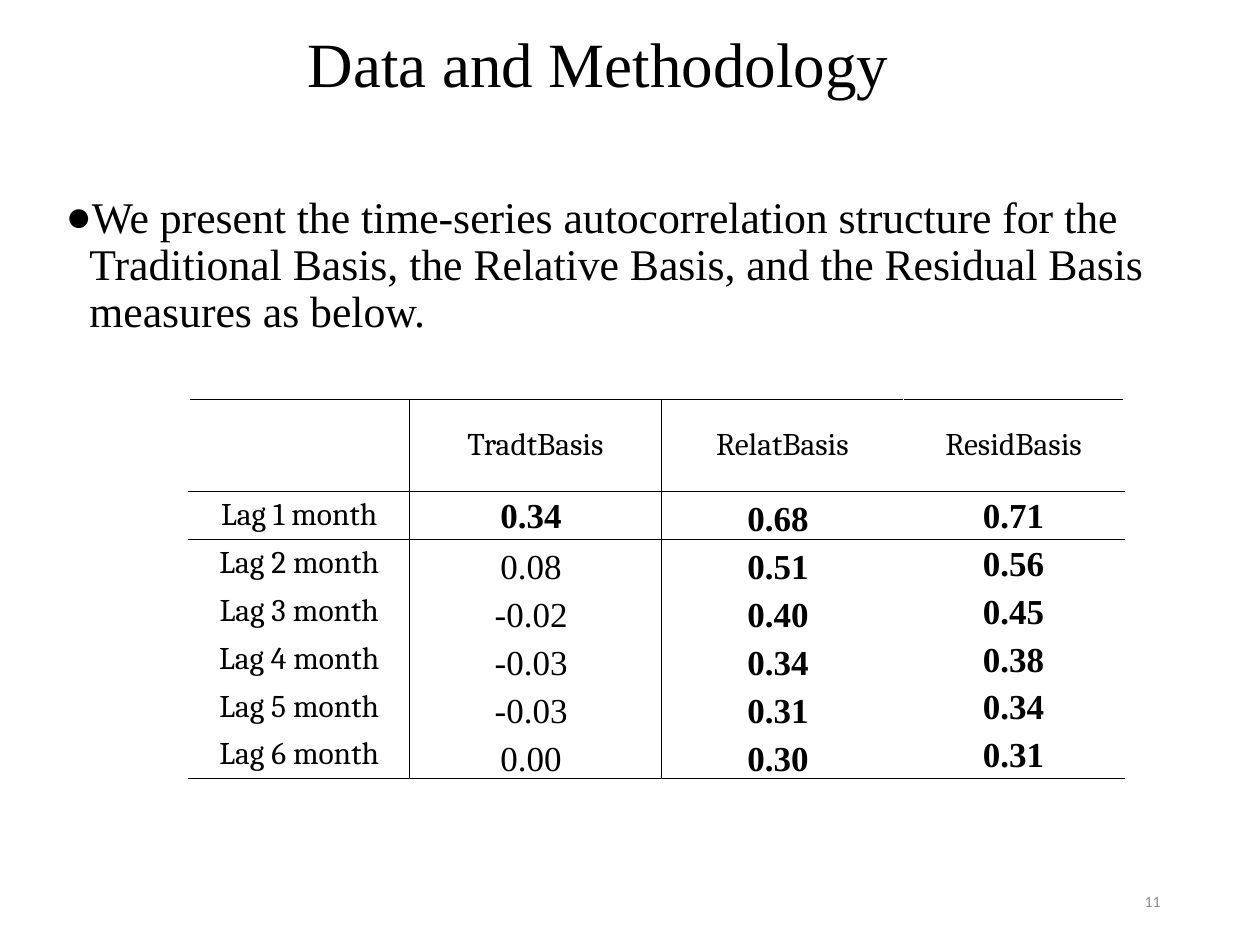
import pptx
import pptx.util
import pptx.dml.color
import pptx.enum.text
import pptx.oxml
import pptx.oxml.ns
from lxml import etree

Inches, Pt = pptx.util.Inches, pptx.util.Pt
RGBColor = pptx.dml.color.RGBColor
ALIGN, ANCHOR = pptx.enum.text.PP_ALIGN, pptx.enum.text.MSO_ANCHOR
qn = pptx.oxml.ns.qn

BLACK = RGBColor(0, 0, 0)
WHITE = RGBColor(0xFF, 0xFF, 0xFF)
GREY = RGBColor(0x8C, 0x8C, 0x8C)
SERIF, LABEL_FONT, NUMBER_FONT = "Times New Roman", "Cambria", "Calibri"
NO_STYLE = "{2D5ABB26-0587-4C30-8999-92F81FD0307C}"

COLUMNS = [1.75, 2, 1.92, 1.75]
HEADER_HEIGHT, ROW_HEIGHT = 0.73, 0.38
HEADINGS = ["", "TradtBasis", "RelatBasis", "ResidBasis"]
AUTOCORRELATIONS = [
    ("0.34 ", "0.68 ", "0.71"),
    ("0.08 ", "0.51 ", "0.56"),
    ("-0.02 ", "0.40 ", "0.45"),
    ("-0.03 ", "0.34 ", "0.38"),
    ("-0.03 ", "0.31 ", "0.34"),
    ("0.00 ", "0.30 ", "0.31"),
]
SIGNIFICANT = 0.3


def write(tf, text, size, font=SERIF, color=BLACK, bold=False,
          align=ALIGN.LEFT, spacing=None, before=None):
    """Write one formatted paragraph into a text frame and return it."""
    p = tf.paragraphs[0]
    p.alignment, p.line_spacing = align, spacing
    if before is not None:
        p.space_before = Pt(before)
    r = p.add_run()
    r.text = text
    r.font.size, r.font.name, r.font.bold = Pt(size), font, bold
    r.font.color.rgb = color
    return p


def place(sp, box, anchor):
    """Move a text shape to a box and return its wrapping text frame."""
    sp.left, sp.top, sp.width, sp.height = map(Inches, box)
    tf = sp.text_frame
    tf.word_wrap = True
    tf.auto_size = pptx.enum.text.MSO_AUTO_SIZE.NONE
    tf.vertical_anchor = anchor
    return tf


def add_title(s, box):
    """Fill the title placeholder."""
    tf = place(s.shapes.title, box, ANCHOR.MIDDLE)
    write(tf, "Data and Methodology ", 36, align=ALIGN.CENTER, spacing=0.9)


def add_body(s, box):
    """Fill the body placeholder with its bulleted statement."""
    tf = place(s.placeholders[1], box, ANCHOR.TOP)
    p = write(tf, "We present the time-series autocorrelation structure for the "
              "Traditional Basis, the Relative Basis, and the Residual Basis "
              "measures as below.", 25, spacing=0.9, before=7.5)
    pPr = p._p.get_or_add_pPr()
    pPr.set("marL", str(Inches(0.19)))
    pPr.set("indent", str(-Inches(0.19)))
    etree.SubElement(pPr, qn("a:buChar")).set("char", "●")


def add_page_number(s, box):
    """Write the page number at the right of a box."""
    tf = place(s.shapes.add_textbox(0, 0, 0, 0), box, ANCHOR.MIDDLE)
    write(tf, "11", 9, font=NUMBER_FONT, color=GREY, align=ALIGN.RIGHT)


def set_borders(cell, **colors):
    """Draw one-point borders on the sides L, R, T and B that have a colour."""
    tcPr = cell._tc.get_or_add_tcPr()
    for side in "LRTB":
        if colors.get(side) is not None:
            ln = etree.SubElement(tcPr, qn(f"a:ln{side}"), w=str(Pt(1)))
            fill = etree.SubElement(ln, qn("a:solidFill"))
            etree.SubElement(fill, qn("a:srgbClr")).set("val", str(colors[side]))


def fill_cell(cell, text, row, col):
    """Write a label or a value with the format of its row and column."""
    cell.margin_left = cell.margin_right = Inches(0.07)
    cell.margin_top = cell.margin_bottom = 0
    if row == 0 or col == 0:
        cell.vertical_anchor = ANCHOR.MIDDLE
        if text:
            write(cell.text_frame, text, 18, font=LABEL_FONT, align=ALIGN.CENTER)
        return
    top_aligned = col == 3 or (row, col) == (1, 1)
    cell.vertical_anchor = ANCHOR.TOP if top_aligned else ANCHOR.BOTTOM
    write(cell.text_frame, text, 20, bold=float(text) >= SIGNIFICANT,
          align=ALIGN.CENTER, spacing=1.15)


def add_lag_table(s, box):
    """Build the autocorrelation table with rules round header and foot."""
    rows = [HEADINGS] + [(f"Lag {i} month", *values)
                         for i, values in enumerate(AUTOCORRELATIONS, 1)]
    table = s.shapes.add_table(len(rows), len(COLUMNS), *map(Inches, box)).table
    table.first_row = table.horz_banding = False
    table._tbl.tblPr.find(qn("a:tableStyleId")).text = NO_STYLE
    for column, width in zip(table.columns, COLUMNS):
        column.width = Inches(width)
    left_rules = [WHITE, BLACK, None, WHITE]
    right_rules = left_rules[1:] + [WHITE]
    for i, values in enumerate(rows):
        table.rows[i].height = Inches(ROW_HEIGHT if i else HEADER_HEIGHT)
        for j, text in enumerate(values):
            cell = table.cell(i, j)
            fill_cell(cell, text, i, j)
            set_borders(cell, L=left_rules[j], R=right_rules[j],
                        T=BLACK if i < 2 else None,
                        B=BLACK if i in (0, len(rows) - 1) else None)
            cell.fill.background()


def main():
    """Build and save the slide."""
    prs = pptx.Presentation()
    prs.slide_width, prs.slide_height = Inches(10), Inches(7.5)
    s = prs.slides.add_slide(prs.slide_layouts[1])
    add_title(s, (0.56, 0.17, 8.5, 0.72))
    add_body(s, (0.42, 1.5, 9.52, 5.5))
    add_page_number(s, (7.06, 6.95, 2.25, 0.4))
    add_lag_table(s, (1.5, 3.17, sum(COLUMNS), 3))
    prs.save("out.pptx")


if __name__ == "__main__":
    main()
